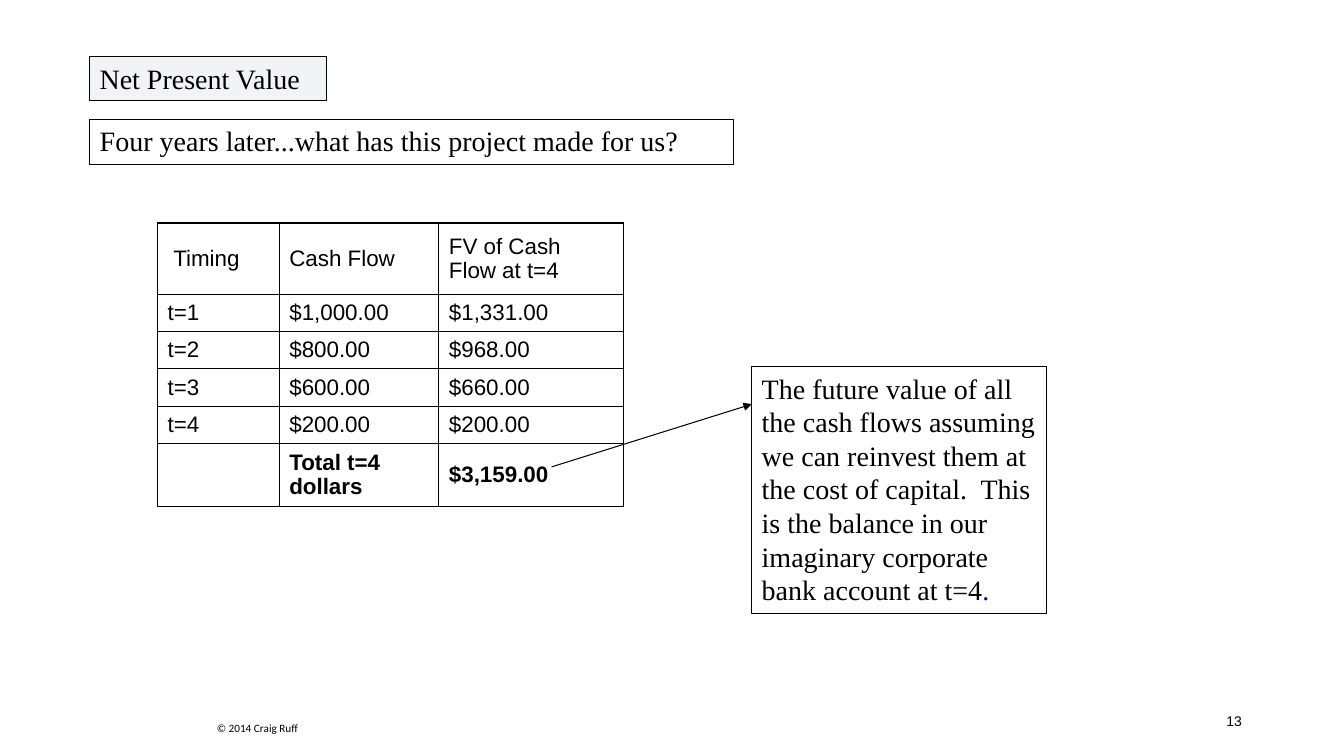
"""Build the net present value slide with its cash flow table and explanation."""
from dataclasses import dataclass

from lxml import etree
from pptx import Presentation
from pptx import util as u
from pptx.dml import color
from pptx.enum import shapes, text
from pptx.oxml import ns

BLACK = "000000"


@dataclass(frozen=True)
class Piece:
    words: str
    hue: str = BLACK
    bold: bool = False


@dataclass(frozen=True)
class Style:
    font: str
    size: float
    align: text.PP_ALIGN = text.PP_ALIGN.LEFT
    anchor: text.MSO_ANCHOR = text.MSO_ANCHOR.MIDDLE
    spacing: float = 1.0


@dataclass(frozen=True)
class Box:
    left: float
    top: float
    width: float
    height: float
    pieces: tuple[Piece, ...]
    style: Style
    framed: bool = True
    tint: str = ""


SERIF = Style("Times New Roman", 20, anchor=text.MSO_ANCHOR.TOP)
HEADLINE = Style("Times New Roman", 20, spacing=0.9)
CELL = Style("Arial", 16)
PAGE_NUMBER = Style("Arial", 10, text.PP_ALIGN.RIGHT)
COPYRIGHT = Style("Calibri", 8, text.PP_ALIGN.CENTER, text.MSO_ANCHOR.TOP)

QUESTION = Box(64, 85.7, 460, 31.7, (
    Piece("Four years later...what has this project made for us?"),), HEADLINE)
BOXES = (
    Box(537, 261.5, 210.3, 177, (
        Piece("The future value of all the cash flows assuming we can reinvest "
              "them at the cost of capital.  This is the balance in our "
              "imaginary corporate bank account at t=4"),
        Piece(".", "0000CC")), SERIF),
    Box(678.2, 500.4, 216, 28.8, (Piece("13"),), PAGE_NUMBER, framed=False),
    Box(64, 40.3, 169.2, 31.7, (Piece("Net Present Value"),), SERIF, tint="002060"),
    Box(140.4, 512, 87, 17.2, (Piece("© 2014 Craig Ruff"),), COPYRIGHT, framed=False),
)
CASH_FLOWS = (
    (" Timing", "Cash Flow", "FV of Cash Flow at t=4"),
    ("t=1", "$1,000.00", "$1,331.00"),
    ("t=2", "$800.00", "$968.00"),
    ("t=3", "$600.00", "$660.00"),
    ("t=4", "$200.00", "$200.00"),
    ("", "Total t=4 dollars", "$3,159.00"),
)
COLUMN_WIDTHS = (87, 114, 132)
ROW_HEIGHTS = (51, 26.6, 26.6, 26.6, 26.6, 45)


def rgb(hue: str) -> color.RGBColor:
    return color.RGBColor.from_string(hue)


def write(frame, pieces: tuple[Piece, ...], style: Style) -> None:
    paragraph = frame.paragraphs[0]
    paragraph.alignment = style.align
    paragraph.line_spacing = style.spacing
    for piece in pieces:
        run = paragraph.add_run()
        run.text = piece.words
        run.font.name = style.font
        run.font.size = u.Pt(style.size)
        run.font.bold = piece.bold
        run.font.color.rgb = rgb(piece.hue)


def outline(line) -> None:
    line.color.rgb = rgb(BLACK)
    line.width = u.Pt(0.75)


def fill_box(shape, box: Box) -> None:
    shape.left, shape.top = u.Pt(box.left), u.Pt(box.top)
    shape.width, shape.height = u.Pt(box.width), u.Pt(box.height)
    frame = shape.text_frame
    frame.word_wrap = True
    frame.auto_size = text.MSO_AUTO_SIZE.NONE
    frame.vertical_anchor = box.style.anchor
    write(frame, box.pieces, box.style)
    if box.framed:
        outline(shape.line)
    if box.tint:
        shape.fill.solid()
        shape.fill.fore_color.rgb = rgb(box.tint)
        tint = shape.fill._xPr.find(".//" + ns.qn("a:srgbClr"))
        etree.SubElement(tint, ns.qn("a:alpha"), val="5000")


def add_box(slide, box: Box) -> None:
    place = [u.Pt(n) for n in (box.left, box.top, box.width, box.height)]
    if box.framed:
        shape = slide.shapes.add_shape(shapes.MSO_SHAPE.RECTANGLE, *place)
        shape.shadow.inherit = False
        shape.fill.background()
    else:
        shape = slide.shapes.add_textbox(*place)
    fill_box(shape, box)


def border_cell(cell) -> None:
    properties = cell._tc.get_or_add_tcPr()
    for index, side in enumerate(("a:lnL", "a:lnR", "a:lnT", "a:lnB")):
        edge = etree.Element(ns.qn(side), w=str(u.Pt(1)))
        solid = etree.SubElement(edge, ns.qn("a:solidFill"))
        etree.SubElement(solid, ns.qn("a:srgbClr"), val=BLACK)
        properties.insert(index, edge)


def add_cash_flows(slide) -> None:
    table = slide.shapes.add_table(
        len(ROW_HEIGHTS), len(COLUMN_WIDTHS), u.Pt(112.5), u.Pt(159.3),
        u.Pt(sum(COLUMN_WIDTHS)), u.Pt(sum(ROW_HEIGHTS))).table
    table.first_row = table.horz_banding = False
    for column, width in zip(table.columns, COLUMN_WIDTHS):
        column.width = u.Pt(width)
    for row, height, entries in zip(table.rows, ROW_HEIGHTS, CASH_FLOWS):
        row.height = u.Pt(height)
        for cell, entry in zip(row.cells, entries):
            cell.fill.background()
            cell.vertical_anchor = CELL.anchor
            border_cell(cell)
            if entry:
                write(cell.text_frame, (Piece(entry, bold=entries is CASH_FLOWS[-1]),), CELL)


def add_total_arrow(slide) -> None:
    arrow = slide.shapes.add_connector(
        shapes.MSO_CONNECTOR.STRAIGHT, u.Pt(394), u.Pt(333.5), u.Pt(537), u.Pt(288.7))
    outline(arrow.line)
    etree.SubElement(arrow.line._get_or_add_ln(), ns.qn("a:tailEnd"), type="triangle")
    etree.SubElement(arrow._element.spPr, ns.qn("a:effectLst"))


def main() -> None:
    deck = Presentation()
    deck.slide_width, deck.slide_height = u.Pt(960), u.Pt(540)
    slide = deck.slides.add_slide(deck.slide_layouts[5])
    fill_box(slide.shapes.title, QUESTION)
    add_cash_flows(slide)
    add_total_arrow(slide)
    for box in BOXES:
        add_box(slide, box)
    deck.save("out.pptx")


if __name__ == "__main__":
    main()
